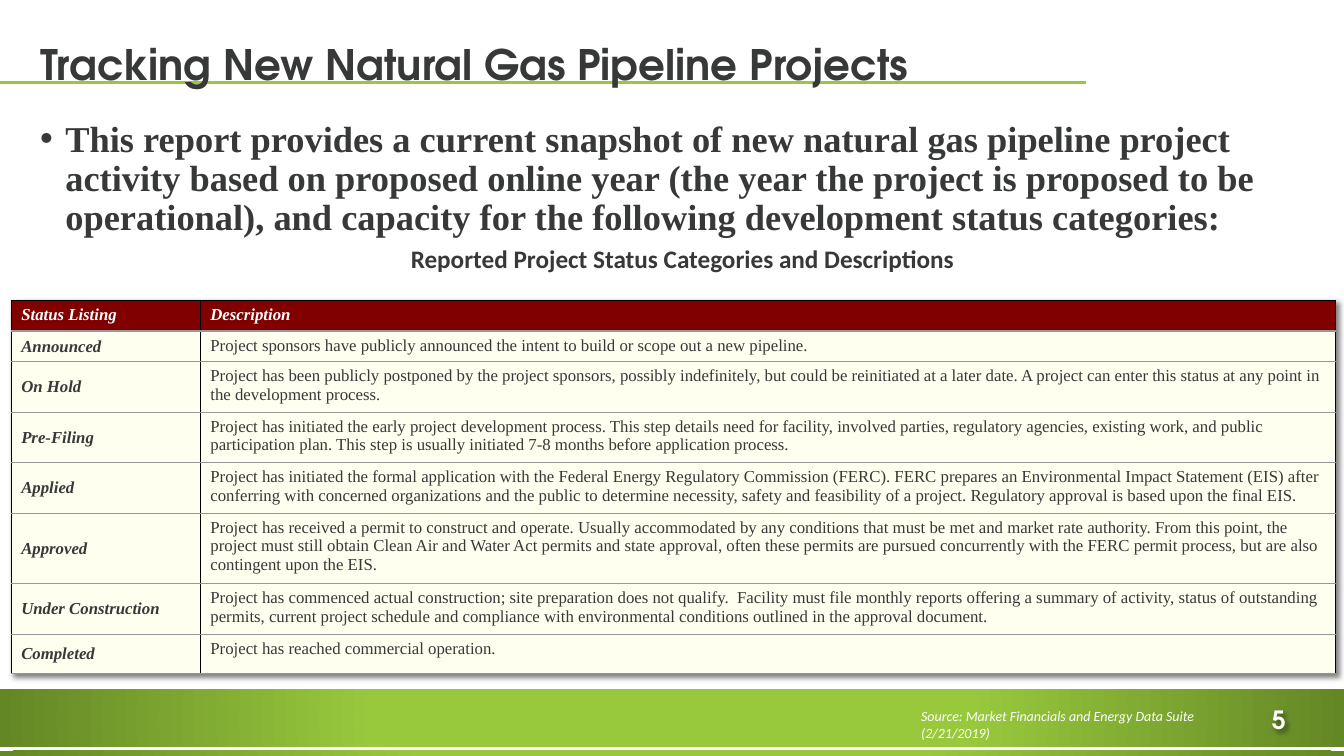
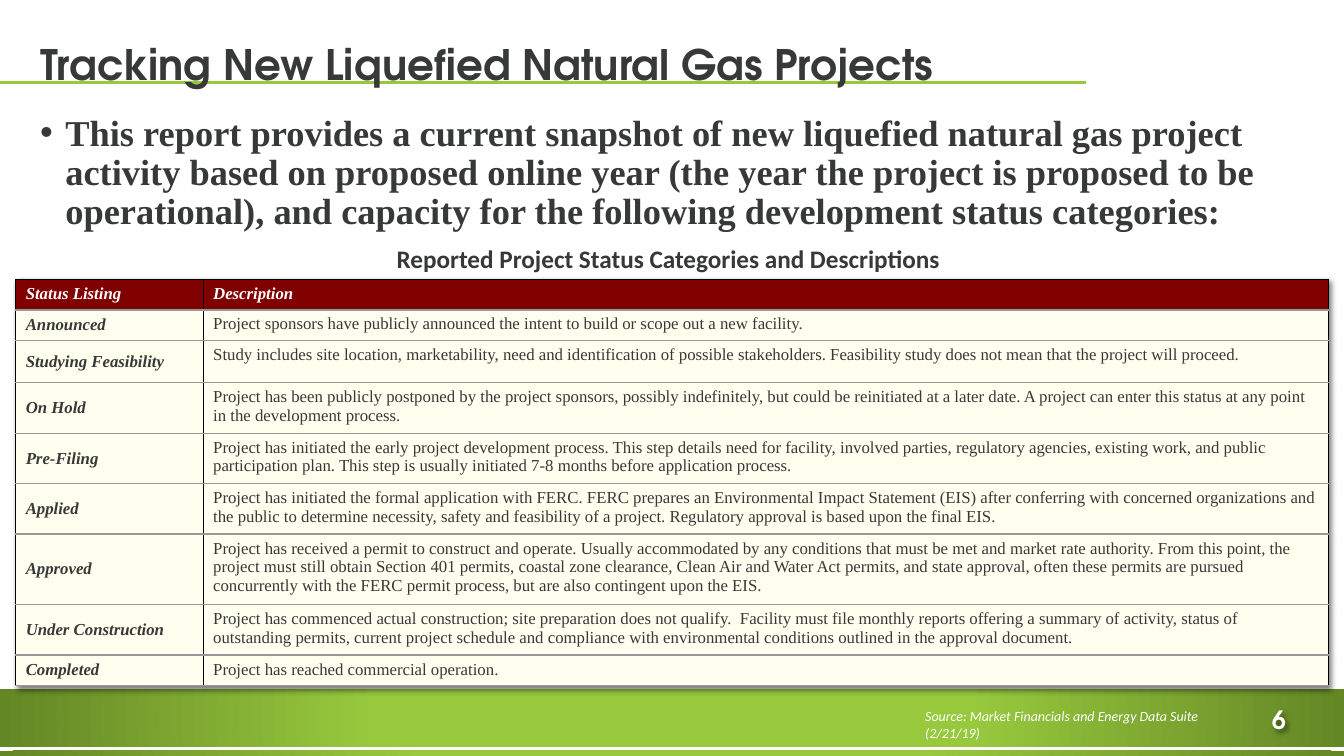
from lxml import etree
from pptx import Presentation
from pptx import util as u
from pptx.dml import color
from pptx.enum import shapes, text
from pptx.oxml import ns

WIDTH, HEIGHT = 960, 540
INK, WHITE, BLACK = "373838", "FFFFFF", "000000"
LEAF, MOSS = "98C93D", "648725"
MAROON, CREAM, RULE = "800000", "FFFFEF", "999999"
TITLE_FONT, BODY_FONT, LABEL_FONT = "TeX Gyre Adventor", "Times New Roman", "Calibri"

INTRO = (
    "This report provides a current snapshot of new {} project activity based on proposed "
    "online year (the year the project is proposed to be operational), and capacity for the "
    "following development status categories:"
)
CAPTION = "Reported Project Status Categories and Descriptions"
ANNOUNCED = "Project sponsors have publicly announced the intent to build or scope out a new {}."
ON_HOLD = (
    "Project has been publicly postponed by the project sponsors, possibly indefinitely, but "
    "could be reinitiated at a later date. A project can enter this status at any point in the "
    "development process."
)
PRE_FILING = (
    "Project has initiated the early project development process. This step details need for "
    "facility, involved parties, regulatory agencies, existing work, and public participation "
    "plan. This step is usually initiated 7-8 months before application process."
)
APPLIED = (
    "Project has initiated the formal application with {}. FERC prepares an Environmental Impact "
    "Statement (EIS) after conferring with concerned organizations and the public to determine "
    "necessity, safety and feasibility of a project. Regulatory approval is based upon the "
    "final EIS."
)
APPROVED = (
    "Project has received a permit to construct and operate. Usually accommodated by any "
    "conditions that must be met and market rate authority. From this point, the project must "
    "still obtain {} state approval, often these permits are pursued concurrently with the FERC "
    "permit process, but are also contingent upon the EIS."
)
CONSTRUCTION = (
    "Project has commenced actual construction; site preparation does not qualify.  Facility "
    "must file monthly reports offering a summary of activity, status of outstanding permits, "
    "current project schedule and compliance with environmental conditions outlined in the "
    "approval document."
)
COMPLETED = "Project has reached commercial operation."
FEASIBILITY = (
    "Study includes site location, marketability, need and identification of possible "
    "stakeholders. Feasibility study does not mean that the project will proceed."
)


def rgb(value):
    """Turn a hex string into a colour."""
    return color.RGBColor.from_string(value)


def add_element(parent, tag, **attributes):
    """Append a DrawingML element and return it."""
    return etree.SubElement(parent, ns.qn(tag), {key: str(value) for key, value in attributes.items()})


def add_shadow(properties, position):
    """Insert a soft shadow towards the lower right."""
    effects = etree.Element(ns.qn("a:effectLst"))
    shadow = add_element(effects, "a:outerShdw", blurRad=50800, dist=38100, dir=2700000,
                         algn="tl", rotWithShape=0)
    black = add_element(shadow, "a:srgbClr", val=BLACK)
    add_element(black, "a:alpha", val=50000)
    properties.insert(position, effects)


def add_run(paragraph, words, size, font, ink, bold=False, italic=False):
    """Add one formatted run to a paragraph."""
    run = paragraph.add_run()
    run.text = words
    run.font.size = u.Pt(size)
    run.font.name = font
    run.font.bold = bold
    run.font.italic = italic
    run.font.color.rgb = rgb(ink)


def add_text(slide, box, words, size, font, ink, bold=False, italic=False, wrap=True):
    """Add a one-paragraph text box and return it."""
    shape = slide.shapes.add_textbox(*map(u.Pt, box))
    shape.text_frame.word_wrap = wrap
    add_run(shape.text_frame.paragraphs[0], words, size, font, ink, bold, italic)
    return shape


def add_band(slide, box, bright_stop):
    """Add a green band that darkens towards its ends."""
    band = slide.shapes.add_shape(shapes.MSO_SHAPE.RECTANGLE, *map(u.Pt, box))
    band.shadow.inherit = False
    band.line.fill.background()
    gradient = etree.Element(ns.qn("a:gradFill"), rotWithShape="1")
    stops = add_element(gradient, "a:gsLst")
    for position, shade in ((bright_stop, LEAF), (100, MOSS)):
        stop = add_element(stops, "a:gs", pos=position * 1000)
        add_element(stop, "a:srgbClr", val=shade)
    circle = add_element(gradient, "a:path", path="circle")
    add_element(circle, "a:fillToRect", l=50000, t=50000, r=50000, b=50000)
    band.element.spPr.insert(2, gradient)


def add_title(slide, box, title):
    """Add the title and the green rule beneath it."""
    left, top, width, height = box
    rule_top = top + height - 8.7
    rule = slide.shapes.add_connector(shapes.MSO_CONNECTOR.STRAIGHT, 0, u.Pt(rule_top),
                                      u.Pt(776), u.Pt(rule_top))
    rule.line.color.rgb = rgb(LEAF)
    rule.line.width = u.Pt(1.75)
    add_element(rule.element.spPr, "a:effectLst")
    shape = add_text(slide, box, title, 30, TITLE_FONT, INK, bold=True)
    shape.text_frame.vertical_anchor = text.MSO_ANCHOR.BOTTOM
    shape.text_frame.paragraphs[0].line_spacing = 0.9


def add_footer(slide, box, source, source_left, number):
    """Add the two green bands, the source line and the slide number."""
    left, top, width, height = box
    add_band(slide, (left, top, width, 41), 44)
    add_band(slide, (left, top + height - 3.6, width, 3.6), 37)
    add_text(slide, (source_left, top + 9.3, 250, 19.4), source, 10, LABEL_FONT, WHITE,
             italic=True, wrap=False)
    shape = add_text(slide, (left + 901.4, top + 7.2, 34.6, 29), number, 18, TITLE_FONT, WHITE,
                     bold=True, wrap=False)
    properties = shape.element.spPr
    add_shadow(properties, len(properties))


def add_intro(slide, box, words):
    """Add the bulleted introduction."""
    shape = add_text(slide, box, words, 26, BODY_FONT, INK, bold=True)
    paragraph = shape.text_frame.paragraphs[0]
    properties = paragraph._p.get_or_add_pPr()
    indent = u.Pt(18)
    properties.set("marL", str(indent))
    properties.set("indent", str(-indent))
    add_element(properties, "a:buFont", typeface="Arial")
    add_element(properties, "a:buChar", char="•")
    paragraph.line_spacing = 0.9


def add_caption(slide, box):
    """Add the centred heading above the table."""
    shape = add_text(slide, box, CAPTION, 18, LABEL_FONT, INK, bold=True)
    shape.text_frame.paragraphs[0].alignment = text.PP_ALIGN.CENTER


def style_cell(cell, words, is_header, is_status):
    """Fill, border and write one table cell."""
    properties = cell._tc.get_or_add_tcPr()
    top_colour = BLACK if is_header else RULE
    for side, shade in (("L", BLACK), ("R", BLACK), ("T", top_colour), ("B", RULE)):
        border = add_element(properties, "a:ln" + side, w=u.Pt(1))
        fill = add_element(border, "a:solidFill")
        add_element(fill, "a:srgbClr", val=shade)
    cell.fill.solid()
    cell.fill.fore_color.rgb = rgb(MAROON if is_header else CREAM)
    if is_status and not is_header:
        cell.vertical_anchor = text.MSO_ANCHOR.MIDDLE
    strong = is_header or is_status
    add_run(cell.text_frame.paragraphs[0], words, 12, BODY_FONT,
            WHITE if is_header else INK, strong, strong)


def add_status_table(slide, box, statuses):
    """Add the table of status names and descriptions."""
    left, top, width = box
    rows = [("Status Listing", 22, "Description")] + statuses
    height = sum(row[1] for row in rows)
    frame = slide.shapes.add_table(len(rows), 2, *map(u.Pt, (left, top, width, height)))
    table = frame.table
    table.horz_banding = False
    add_shadow(table._tbl.tblPr, 0)
    status_width = round(width / 7, 1)
    table.columns[0].width = u.Pt(status_width)
    table.columns[1].width = u.Pt(width - status_width)
    for index, (status, row_height, description) in enumerate(rows):
        table.rows[index].height = u.Pt(row_height)
        for column, words in enumerate((status, description)):
            style_cell(table.cell(index, column), words, index == 0, column == 0)


def list_statuses(facility, agency, permits, last_height, extra=()):
    """List the statuses as name, row height and description."""
    return [
        ("Announced", 22, ANNOUNCED.format(facility)),
        *extra,
        ("On Hold", 34, ON_HOLD),
        ("Pre-Filing", 34, PRE_FILING),
        ("Applied", 34, APPLIED.format(agency)),
        ("Approved", 47.4, APPROVED.format(permits)),
        ("Under Construction", 34, CONSTRUCTION),
        ("Completed", last_height, COMPLETED),
    ]


def add_status_slide(presentation, number, title, subject, intro_top, caption_left, table_box,
                     statuses, source, source_left):
    """Build one slide that explains the project statuses."""
    slide = presentation.slides.add_slide(presentation.slide_layouts[6])
    add_footer(slide, (0, 492.5, WIDTH, HEIGHT - 492.5), source, source_left, number)
    add_title(slide, (21.6, 20.2, 912, 47.5), title)
    add_intro(slide, (21.6, intro_top, 912, 107), INTRO.format(subject))
    add_status_table(slide, table_box, statuses)
    add_caption(slide, (caption_left, 170.6, 891.4, 29))


def main():
    """Build and save the presentation."""
    presentation = Presentation()
    presentation.slide_width = u.Pt(WIDTH)
    presentation.slide_height = u.Pt(HEIGHT)
    add_status_slide(
        presentation, "5", "Tracking New Natural Gas Pipeline Projects", "natural gas pipeline",
        82.8, 41.8, (8, 214.5, 946),
        list_statuses("pipeline", "the Federal Energy Regulatory Commission (FERC)",
                      "Clean Air and Water Act permits and", 28),
        "Source: Market Financials and Energy Data Suite (2/21/2019)", 650.9)
    add_status_slide(
        presentation, "6", "Tracking New Liquefied Natural Gas Projects", "liquefied natural gas",
        78.5, 31.7, (11.2, 199.4, 937.6),
        list_statuses("facility", "FERC",
                      "Section 401 permits, coastal zone clearance, Clean Air and Water Act "
                      "permits, and", 20, [("Studying Feasibility", 30, FEASIBILITY)]),
        "Source: Market Financials and Energy Data Suite (2/21/19)", 653.8)
    presentation.save("out.pptx")


if __name__ == "__main__":
    main()
